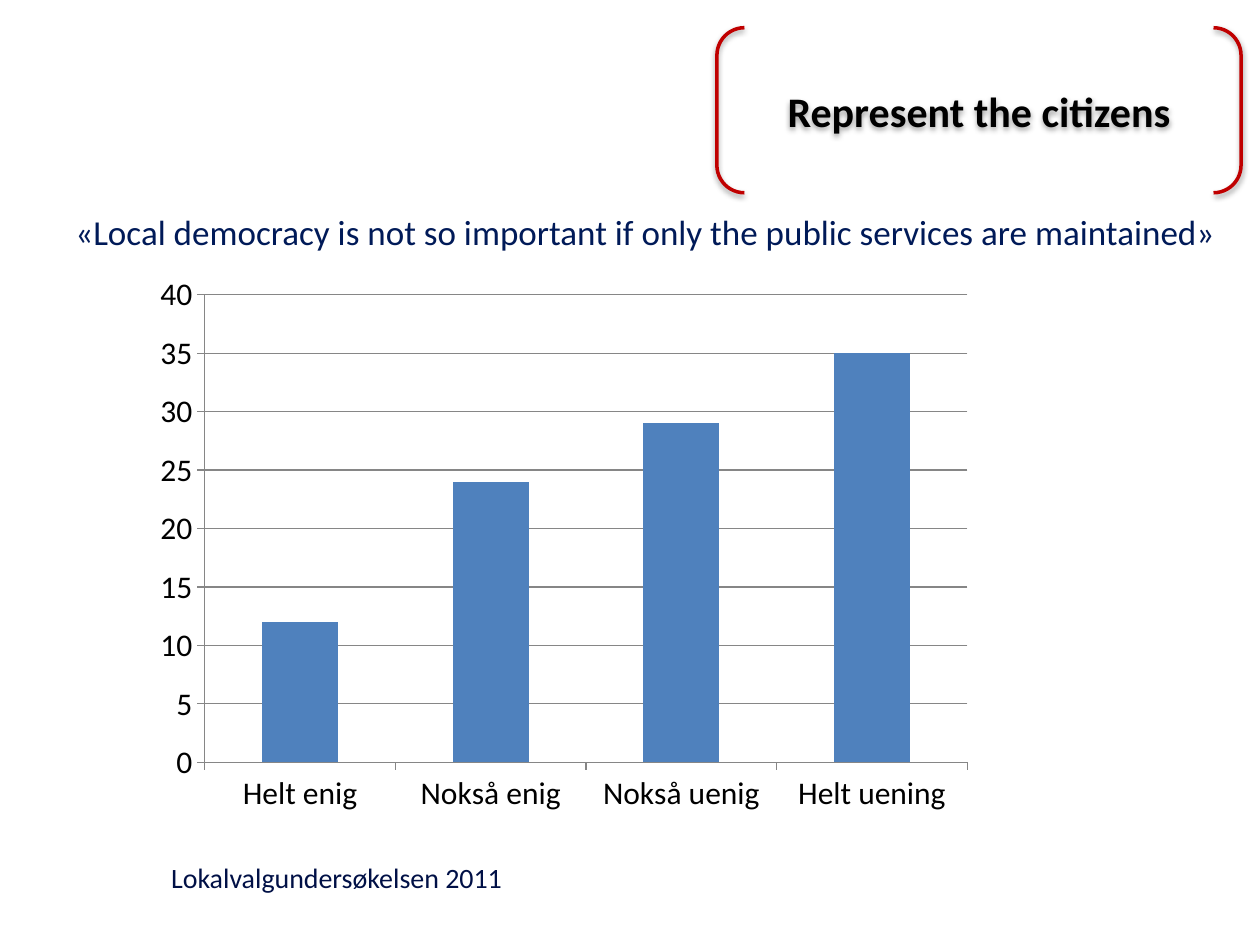
import pptx
import pptx.chart.data
import pptx.dml.color
import pptx.enum.chart
import pptx.enum.shapes
import pptx.enum.text
import pptx.oxml
import pptx.util
from pptx.oxml.ns import nsdecls

FONT = "Calibri"
HEADING = "Represent the citizens"
STATEMENT = "«Local democracy is not so important if only the public services are maintained»"
SOURCE = "Lokalvalgundersøkelsen 2011"
ANSWERS = {"Helt enig": 12, "Nokså enig": 24, "Nokså uenig": 29, "Helt uening": 35}

WIDTH, HEIGHT = 10, 7.5
# left, top, width, height in inches
STATEMENT_AREA = (0.5, 1.62, 9.5, 0.5)
CHART_AREA = (1.14, 2.1, 6.67, 4.44)
SOURCE_AREA = (1.26, 6.34, 8.28, 1.24)
HEADING_AREA = (5.69, 0.22, 4.16, 1.31)


def rgb(color):
    return pptx.dml.color.RGBColor.from_string(color)


def inches(area):
    return [pptx.util.Inches(length) for length in area]


def style(font, size, color, bold=False):
    font.name, font.size, font.bold = FONT, pptx.util.Pt(size), bold
    font.color.rgb = rgb(color)


def write(shape, text, size, color, bold=False, align="LEFT", anchor="MIDDLE"):
    frame = shape.text_frame
    frame.word_wrap = True
    frame.vertical_anchor = pptx.enum.text.MSO_ANCHOR[anchor]
    paragraph = frame.paragraphs[0]
    paragraph.text = text
    paragraph.alignment = pptx.enum.text.PP_ALIGN[align]
    style(paragraph.font, size, color, bold)


def add_shadow(shape):
    shape._element.spPr.append(pptx.oxml.parse_xml(
        f'<a:effectLst {nsdecls("a")}>'
        '<a:outerShdw blurRad="40000" dist="20000" dir="5400000" rotWithShape="0">'
        '<a:srgbClr val="000000"><a:alpha val="38000"/></a:srgbClr>'
        '</a:outerShdw></a:effectLst>'))


def add_answers_chart(shapes):
    data = pptx.chart.data.CategoryChartData()
    data.categories = list(ANSWERS)
    data.add_series("Series 1", list(ANSWERS.values()))
    chart = shapes.add_chart(pptx.enum.chart.XL_CHART_TYPE.COLUMN_CLUSTERED,
                             *inches(CHART_AREA), data).chart
    chart.has_legend = chart.has_title = False
    style(chart.font, 18, "000000")

    plot = chart.plots[0]
    plot.gap_width = 150
    plot.vary_by_categories = False
    bars = plot.series[0].format.fill
    bars.solid()
    bars.fore_color.rgb = rgb("4F81BD")

    values = chart.value_axis
    values.minimum_scale, values.maximum_scale, values.major_unit = 0, 40, 5
    values.has_major_gridlines = True
    for axis in (values, chart.category_axis):
        axis.major_tick_mark = pptx.enum.chart.XL_TICK_MARK.OUTSIDE
    for part in (values, chart.category_axis, values.major_gridlines):
        part.format.line.color.rgb = rgb("868686")
        part.format.line.width = pptx.util.Pt(0.75)


presentation = pptx.Presentation()
presentation.slide_width, presentation.slide_height = inches((WIDTH, HEIGHT))
shapes = presentation.slides.add_slide(presentation.slide_layouts[6]).shapes

write(shapes.add_textbox(*inches(SOURCE_AREA)), SOURCE, 16, "001046")
write(shapes.add_textbox(*inches(STATEMENT_AREA)), STATEMENT, 20, "001A58", anchor="TOP")
add_answers_chart(shapes)

heading = shapes.add_shape(pptx.enum.shapes.MSO_SHAPE.DOUBLE_BRACKET, *inches(HEADING_AREA))
heading.fill.background()
heading.line.color.rgb = rgb("C00000")
heading.line.width = pptx.util.Pt(2)
add_shadow(heading)
write(heading, HEADING, 24, "000000", bold=True, align="CENTER")

presentation.save("out.pptx")
